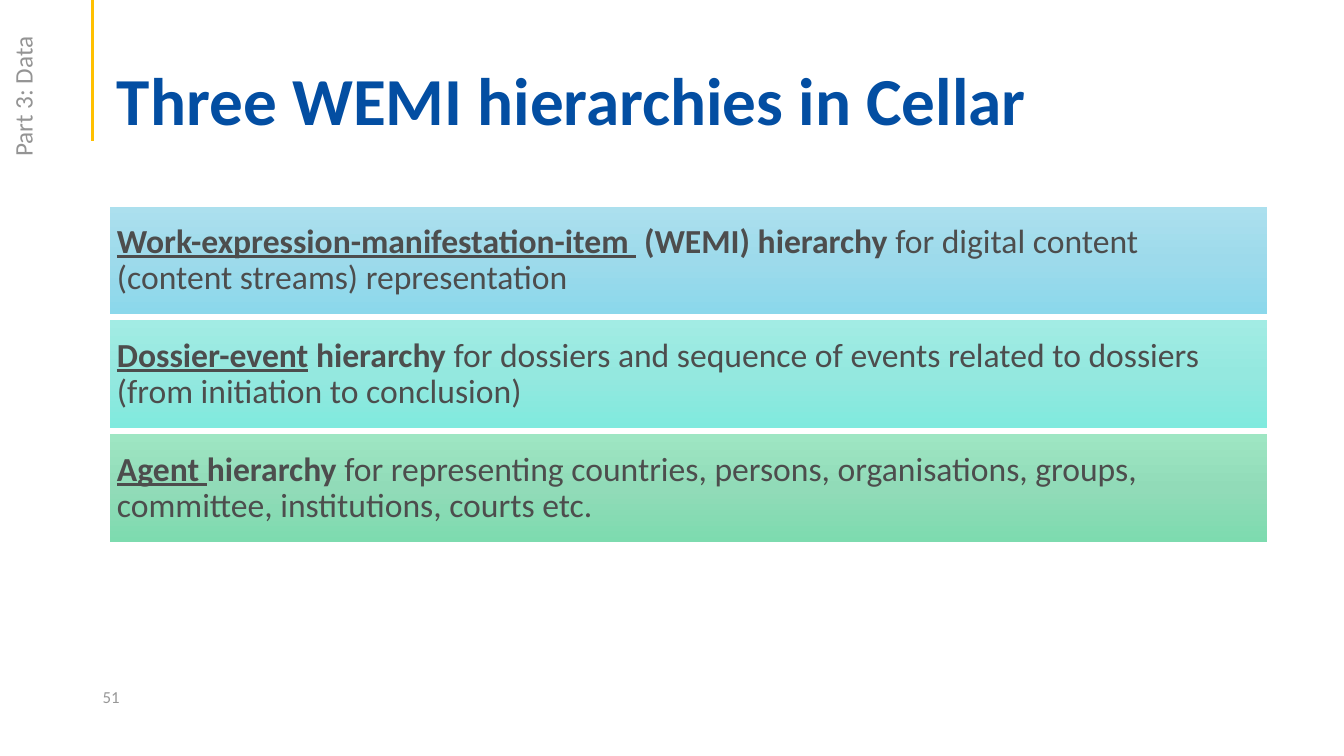
"""Build the slide on the three WEMI hierarchies in Cellar."""
from copy import deepcopy

from lxml import etree
from pptx import Presentation
from pptx.dml.color import RGBColor
from pptx.enum.shapes import MSO_CONNECTOR as Connector, MSO_SHAPE as Shape
from pptx.enum.text import MSO_ANCHOR as Anchor, MSO_AUTO_SIZE as AutoSize, PP_ALIGN as Align
from pptx.oxml.ns import qn
from pptx.util import Inches, Pt

FONT = "Calibri"
COLORS = {"title": "034EA2", "rule": "FFC000", "section": "949494", "number": "979797", "text": "4D4D4D"}
TITLE = "Three WEMI hierarchies in Cellar"
SECTION = "Part 3: Data"
PAGE_NUMBER = "51"
BANDS = [
    (("ACE0EE", "9DDAEB", "8BD8EB"), [
        ("Work-expression-manifestation-item", "bu"),
        (" ", "bui"),
        (" (WEMI) hierarchy ", "b"),
        ("for digital content (content streams) representation", ""),
    ]),
    (("A2ECE4", "94E8DF", "80EADE"), [
        ("Dossier-event", "bu"),
        (" hierarchy ", "b"),
        ("for dossiers and sequence of events related to dossiers (from initiation to conclusion)", ""),
    ]),
    (("9EE6C3", "91DBB8", "7DDBAF"), [
        ("Agent ", "bu"),
        ("hierarchy ", "b"),
        ("for representing countries, persons, organisations, groups, committee, institutions, courts etc.", ""),
    ]),
]
BAND_LEFT, BAND_TOP, BAND_WIDTH, BAND_HEIGHT, BAND_PITCH = 1.09, 2.05, 11.48, 1.07, 1.13


def add_run(paragraph, text, size, color, style=""):
    run = paragraph.add_run()
    run.text = text
    font = run.font
    font.name, font.size = FONT, Pt(size)
    font.color.rgb = RGBColor.from_string(color)
    font.bold, font.underline, font.italic = "b" in style, "u" in style, "i" in style


def add_label(slide, box, text, size, color):
    label = slide.shapes.add_textbox(*map(Inches, box))
    add_run(label.text_frame.paragraphs[0], text, size, color)
    return label


def fill_gradient(shape, colors):
    shape.fill.gradient()
    shape.fill.gradient_angle = 270
    first = shape._element.spPr.find(".//" + qn("a:gs"))
    first.addnext(deepcopy(first))
    for index, (stop, color) in enumerate(zip(shape.fill.gradient_stops, colors)):
        stop.position = index / (len(colors) - 1)
        stop.color.rgb = RGBColor.from_string(color)


def add_band(slide, index, colors, runs):
    top = BAND_TOP + index * BAND_PITCH
    band = slide.shapes.add_shape(
        Shape.RECTANGLE, *map(Inches, (BAND_LEFT, top, BAND_WIDTH, BAND_HEIGHT)))
    band.shadow.inherit = False
    band.line.fill.background()
    fill_gradient(band, colors)
    frame = band.text_frame
    frame.word_wrap = True
    frame.vertical_anchor = Anchor.MIDDLE
    frame.margin_left = frame.margin_right = frame.margin_top = frame.margin_bottom = Inches(0.07)
    paragraph = frame.paragraphs[0]
    paragraph.alignment = Align.LEFT
    paragraph.line_spacing = 0.9
    for text, style in runs:
        add_run(paragraph, text, 24, COLORS["text"], style)


def main():
    presentation = Presentation()
    presentation.slide_width, presentation.slide_height = Inches(13.33), Inches(7.5)
    slide = presentation.slides.add_slide(presentation.slide_layouts[5])

    rule = slide.shapes.add_connector(
        Connector.STRAIGHT, Inches(0.92), 0, Inches(0.92), Inches(1.4))
    rule.line.color.rgb = RGBColor.from_string(COLORS["rule"])
    rule.line.width = Pt(2.25)
    etree.SubElement(rule._element.spPr, qn("a:effectLst"))

    title = slide.shapes.title
    title.left, title.top, title.width, title.height = map(Inches, (1.06, 0.53, 11.5, 0.86))
    frame = title.text_frame
    frame.auto_size = AutoSize.NONE
    frame.vertical_anchor = Anchor.BOTTOM
    frame.margin_bottom = 0
    paragraph = frame.paragraphs[0]
    paragraph.alignment = Align.LEFT
    paragraph.line_spacing = 0.9
    add_run(paragraph, TITLE, 48, COLORS["title"], "b")

    section = add_label(slide, (-0.48, 0.75, 1.41, 0.4), SECTION, 18, COLORS["section"])
    section.rotation = 270
    section.text_frame.word_wrap = False
    section.text_frame.auto_size = AutoSize.SHAPE_TO_FIT_TEXT

    number = add_label(slide, (0.92, 6.71, 3, 0.4), PAGE_NUMBER, 12, COLORS["number"])
    number.text_frame.word_wrap = True
    number.text_frame.vertical_anchor = Anchor.MIDDLE

    for index, (colors, runs) in enumerate(BANDS):
        add_band(slide, index, colors, runs)

    presentation.save("out.pptx")


if __name__ == "__main__":
    main()
